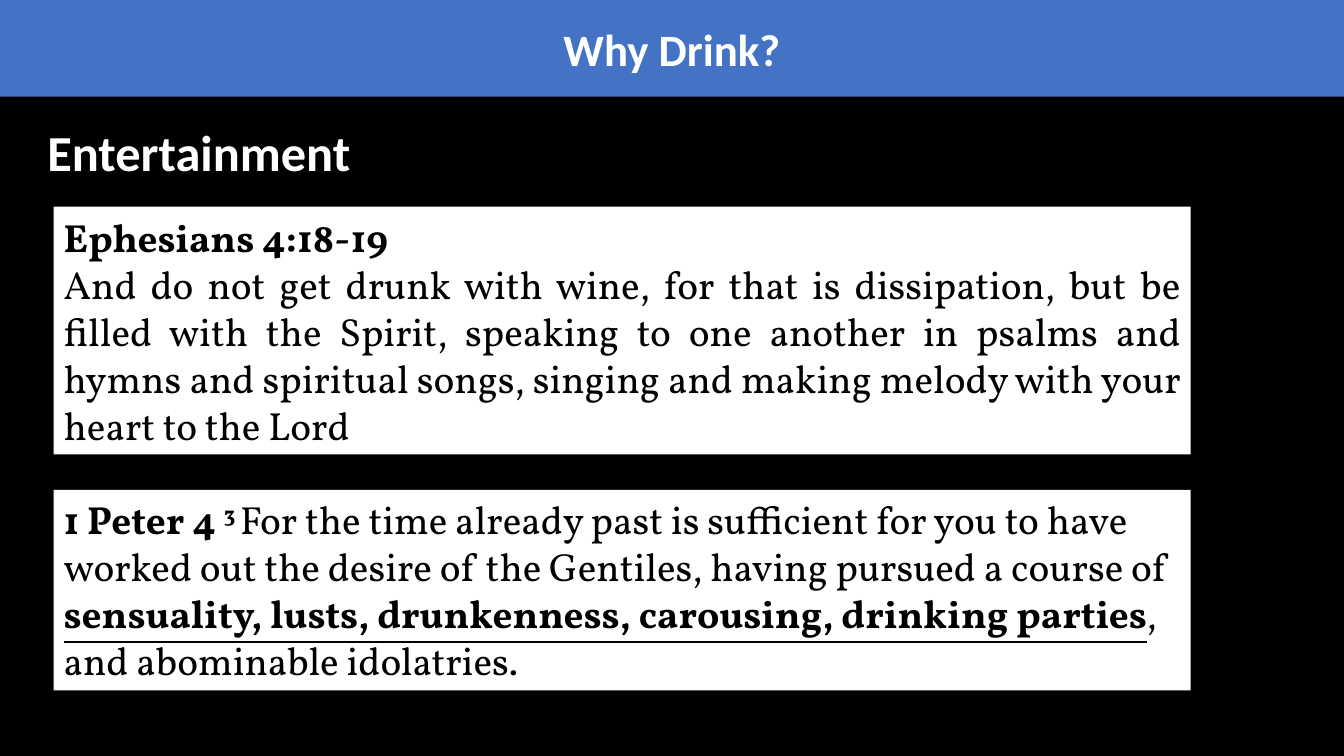
from dataclasses import dataclass

from pptx import Presentation
from pptx.dml.color import RGBColor as RGB
from pptx.enum.shapes import MSO_SHAPE as Shape
from pptx.enum.text import MSO_ANCHOR as Anchor, MSO_AUTO_SIZE as Fit, PP_ALIGN as Align
from pptx.util import Inches, Pt


@dataclass(frozen=True)
class Theme:
    back: RGB = RGB(0, 0, 0)
    banner: RGB = RGB(0x44, 0x72, 0xC4)
    card: RGB = RGB(255, 255, 255)
    light: RGB = RGB(255, 255, 255)
    dark: RGB = RGB(0, 0, 0)
    sans: str = "Calibri"
    serif: str = "Vollkorn"
    title: int = 32
    heading: int = 36
    verse: int = 28


T = Theme()
WIDTH, HEIGHT = Inches(13.33), Inches(7.5)
CARD_LEFT, CARD_WIDTH = 4, 84.6

TITLE_FONT = {"name": T.sans, "size": Pt(T.title), "bold": True, "color": T.light}
HEADING_FONT = {**TITLE_FONT, "size": Pt(T.heading)}
VERSE_FONT = {"name": T.serif, "size": Pt(T.verse), "bold": False, "color": T.dark}
BOLD = {"bold": True}
RAISED = {"bold": True, "baseline": 30000}
STRESSED = {"bold": True, "underline": True}

EPHESIANS = [
    [("Ephesians 4:18-19", BOLD)],
    [("And do not get drunk with wine, for that is dissipation, but be filled "
      "with the Spirit, speaking to one another in psalms and hymns and spiritual "
      "songs, singing and making melody with your heart to the Lord", {})],
]
PETER = [[
    ("1 Peter 4 ", BOLD),
    ("3 ", RAISED),
    ("For the time already past is sufficient for you to have worked out "
     "the desire of the Gentiles, having pursued a course of ", {}),
    ("sensuality, lusts, drunkenness, carousing, drinking parties", STRESSED),
    (", and abominable idolatries.", {}),
]]


def box(left, top, width, height):
    return (int(WIDTH * left / 100), int(HEIGHT * top / 100),
            int(WIDTH * width / 100), int(HEIGHT * height / 100))


def format_run(r, values):
    for key, value in values.items():
        if key == "color":
            r.font.color.rgb = value
        elif key == "baseline":
            r._r.get_or_add_rPr().set("baseline", str(value))
        else:
            setattr(r.font, key, value)


def write(sp, paragraphs, font, align, frame):
    tf = sp.text_frame
    for key, value in {"word_wrap": True, **frame}.items():
        setattr(tf, key, value)
    for i, runs in enumerate(paragraphs):
        p = tf.add_paragraph() if i else tf.paragraphs[0]
        p.alignment = align
        for text, extra in runs:
            r = p.add_run()
            r.text = text
            format_run(r, {**font, **extra})


def add_panel(s, area, fill, paragraphs, font, align, frame):
    sp = s.shapes.add_shape(Shape.RECTANGLE, *box(*area))
    sp.shadow.inherit = False
    sp.fill.solid()
    sp.fill.fore_color.rgb = fill
    sp.line.fill.background()
    write(sp, paragraphs, font, align, frame)


def add_heading(s, area, text):
    sp = s.shapes.add_textbox(*box(*area))
    write(sp, [[(text, {})]], HEADING_FONT, Align.LEFT, {"auto_size": Fit.SHAPE_TO_FIT_TEXT})


def add_verse(s, top, height, paragraphs, align, anchor):
    frame = {"auto_size": Fit.SHAPE_TO_FIT_TEXT, "vertical_anchor": anchor}
    add_panel(s, (CARD_LEFT, top, CARD_WIDTH, height), T.card,
              paragraphs, VERSE_FONT, align, frame)


def main():
    prs = Presentation()
    prs.slide_width, prs.slide_height = WIDTH, HEIGHT
    s = prs.slides.add_slide(prs.slide_layouts[6])
    s.background.fill.solid()
    s.background.fill.fore_color.rgb = T.back

    add_panel(s, (0, 0, 100, 12.8), T.banner, [[("Why Drink?", {})]],
              TITLE_FONT, Align.CENTER, {"vertical_anchor": Anchor.MIDDLE})
    add_heading(s, (2.78, 15.33, 96.25, 9.47), "Entertainment")
    add_verse(s, 27.33, 32.8, EPHESIANS, Align.JUSTIFY, Anchor.MIDDLE)
    add_verse(s, 64.8, 26.53, PETER, Align.LEFT, Anchor.TOP)

    prs.save("out.pptx")


if __name__ == "__main__":
    main()
